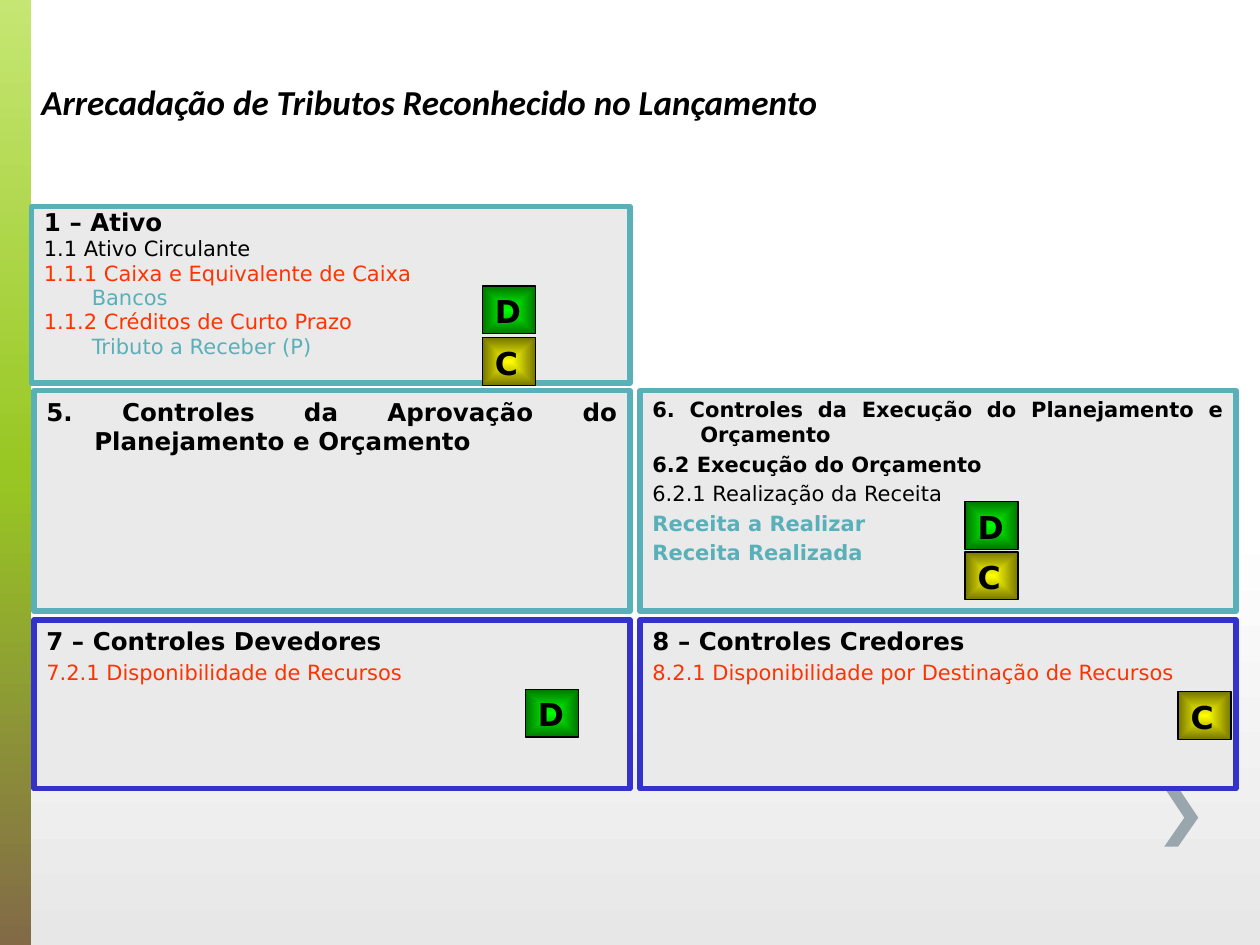
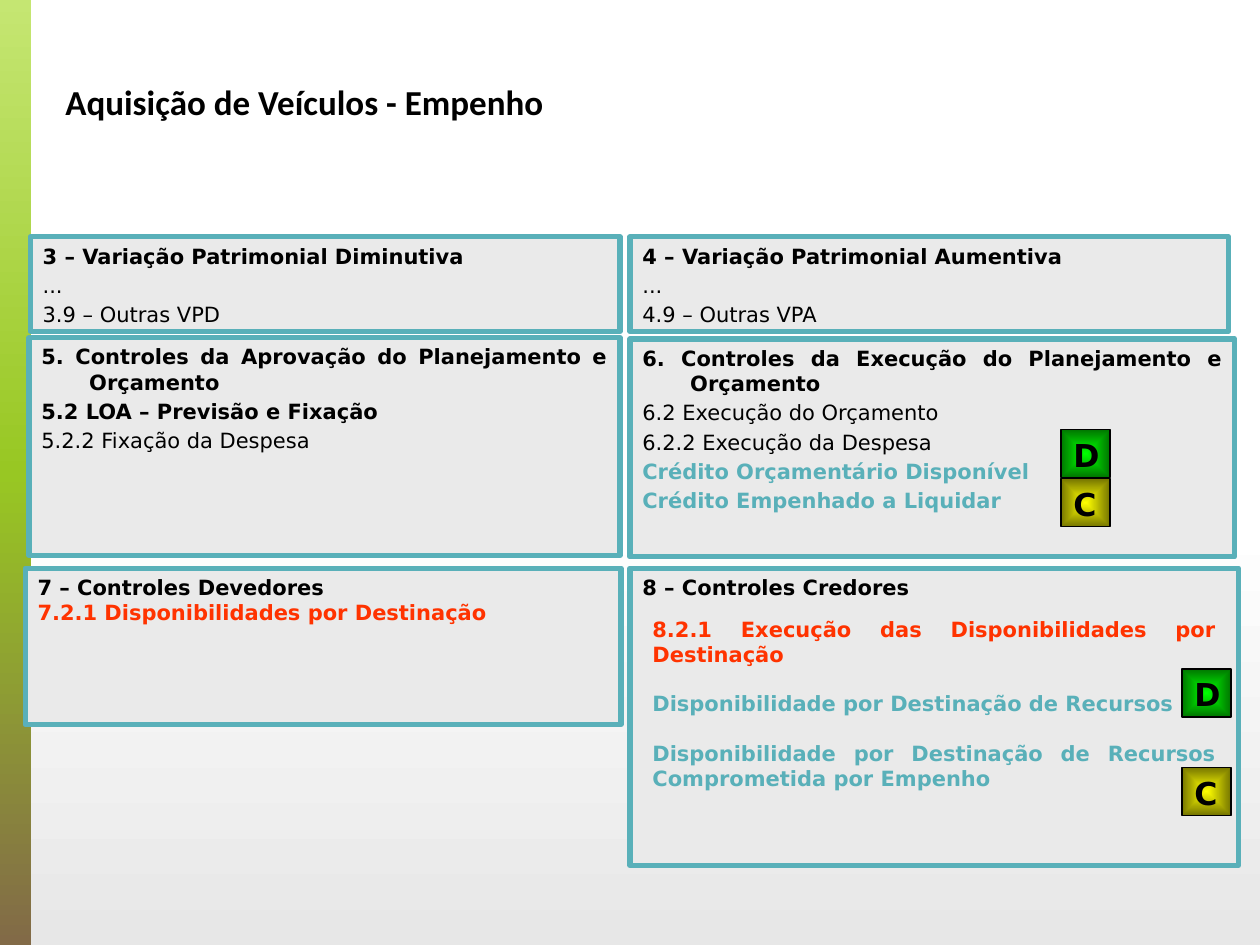
from dataclasses import dataclass

from lxml.etree import SubElement
from pptx import Presentation
from pptx.dml.color import RGBColor
from pptx.enum.shapes import MSO_SHAPE as Shape
from pptx.enum.text import MSO_ANCHOR as Anchor, PP_ALIGN as Align
from pptx.oxml.ns import qn
from pptx.util import Inches, Pt


@dataclass(frozen=True)
class Theme:
    black: str = "000000"
    red: str = "FF3300"
    teal: str = "59B0B9"
    blue: str = "3333CC"
    panel: str = "EAEAEA"
    chevron: str = "99A6AE"
    backdrop: tuple = ((0, "FFFFFF"), (55, "FFFFFF"), (100, "E7E7E7"))
    band: tuple = ((0, "C5E672"), (50, "98C723"), (100, "826A47"))
    debit: tuple = ((0, "00FF00"), (100, "007600"))
    credit: tuple = ((0, "FFFF00"), (100, "767600"))
    title_font: str = "Calibri"
    body_font: str = "DejaVu Sans"
    title_size: int = 20
    badge_size: int = 18
    heading_size: int = 14
    body_size: int = 12
    border: float = 3
    badge_border: float = 0.75
    hang: float = 0.38


THEME = Theme()


@dataclass(frozen=True)
class Entry:
    text: str
    color: str = THEME.black
    bold: bool = False
    size: int = THEME.body_size
    indented: bool = False


def heading(text, size=THEME.body_size):
    return Entry(text, bold=True, size=size)


def large_heading(text):
    return heading(text, THEME.heading_size)


def set_gradient(fill, owner, stops, centered=False):
    fill.gradient()
    gradient = owner.find(".//" + qn("a:gradFill"))
    for child in list(gradient):
        gradient.remove(child)
    stop_list = SubElement(gradient, qn("a:gsLst"))
    for position, color in stops:
        stop = SubElement(stop_list, qn("a:gs"), pos=str(position * 1000))
        SubElement(stop, qn("a:srgbClr"), val=color)
    if centered:
        center = SubElement(gradient, qn("a:path"), path="shape")
        SubElement(center, qn("a:fillToRect"), l="50000", t="50000", r="50000", b="50000")
    else:
        SubElement(gradient, qn("a:lin"), ang="5400000", scaled="0")


def set_line(shape, color, width):
    shape.line.color.rgb = RGBColor.from_string(color)
    shape.line.width = Pt(width)


def add_rectangle(page, box):
    shape = page.shapes.add_shape(Shape.RECTANGLE, *map(Inches, box))
    shape.shadow.inherit = False
    return shape


def write_entries(frame, entries, spacing=0.2, line_spacing=None, hang=0.0):
    frame.word_wrap = True
    frame.vertical_anchor = Anchor.TOP
    for index, entry in enumerate(entries):
        para = frame.paragraphs[0] if index == 0 else frame.add_paragraph()
        para.text = entry.text
        para.alignment = Align.JUSTIFY
        para.space_before = Pt(entry.size * spacing if index else 0)
        if line_spacing:
            para.line_spacing = line_spacing
        properties = para._p.get_or_add_pPr()
        properties.set("marL", str(Inches(hang)))
        properties.set("indent", str(0 if entry.indented else Inches(-hang)))
        font = para.font
        font.name = THEME.body_font
        font.size = Pt(entry.size)
        font.bold = entry.bold
        font.color.rgb = RGBColor.from_string(entry.color)


def add_badge(page, letter, left, top, width):
    badge = add_rectangle(page, (left, top, width, 0.38))
    stops = THEME.debit if letter == "D" else THEME.credit
    set_gradient(badge.fill, badge._element.spPr, stops, centered=True)
    set_line(badge, THEME.black, THEME.badge_border)
    write_entries(badge.text_frame, [heading(letter, THEME.badge_size)])


def add_panel(page, box, entries, badges=(), badge_width=0.42,
              border=THEME.teal, spacing=0.2, line_spacing=None):
    panel = add_rectangle(page, box)
    panel.fill.solid()
    panel.fill.fore_color.rgb = RGBColor.from_string(THEME.panel)
    set_line(panel, border, THEME.border)
    write_entries(panel.text_frame, entries, spacing, line_spacing, THEME.hang)
    for letter, across, down in badges:
        add_badge(page, letter, box[0] + across, box[1] + down, badge_width)


def add_detail(page, box, entries):
    detail = page.shapes.add_textbox(*map(Inches, box))
    write_entries(detail.text_frame, entries, spacing=1.17)


def add_title(page, text, left, italic=False):
    title = page.shapes.add_textbox(*map(Inches, (left, 0.59, 9.5, 0.44)))
    title.text_frame.word_wrap = True
    para = title.text_frame.paragraphs[0]
    para.text = text
    font = para.font
    font.name = THEME.title_font
    font.size = Pt(THEME.title_size)
    font.bold = True
    font.italic = italic
    font.color.rgb = RGBColor.from_string(THEME.black)


def add_page(deck):
    page = deck.slides.add_slide(deck.slide_layouts[6])
    set_gradient(page.background.fill, page.element, THEME.backdrop)
    band = add_rectangle(page, (0, 0, 0.25, 7.5))
    set_gradient(band.fill, band._element.spPr, THEME.band)
    band.line.fill.background()
    return page


def add_chevron(page, left, top):
    outline = [(0.11, 0), (0, 0), (0.16, 0.24), (0, 0.47), (0.11, 0.47), (0.27, 0.24)]
    points = [(Inches(left + x), Inches(top + y)) for x, y in outline]
    builder = page.shapes.build_freeform(*points[0])
    builder.add_line_segments(points[1:], close=True)
    chevron = builder.convert_to_shape()
    chevron.shadow.inherit = False
    chevron.fill.solid()
    chevron.fill.fore_color.rgb = RGBColor.from_string(THEME.chevron)
    chevron.line.fill.background()


def build_tax_collection(deck):
    page = add_page(deck)
    add_chevron(page, 9.24, 6.25)
    left, right, width = 0.27, 5.08, 4.73
    add_panel(page, (left, 4.92, width, 1.34), [
        large_heading("7 – Controles Devedores"),
        Entry("7.2.1 Disponibilidade de Recursos", THEME.red),
    ], [("D", 3.9, 0.55)], border=THEME.blue)
    add_panel(page, (right, 4.92, width, 1.34), [
        large_heading("8 – Controles Credores"),
        Entry("8.2.1 Disponibilidade por Destinação de Recursos", THEME.red),
    ], [("C", 4.27, 0.57)], border=THEME.blue)
    add_panel(page, (0.25, 1.64, 4.75, 1.4), [
        large_heading("1 – Ativo"),
        Entry("1.1 Ativo Circulante"),
        Entry("1.1.1 Caixa e Equivalente de Caixa", THEME.red),
        Entry("Bancos", THEME.teal, indented=True),
        Entry("1.1.2 Créditos de Curto Prazo", THEME.red),
        Entry("Tributo a Receber (P)", THEME.teal, indented=True),
    ], [("D", 3.58, 0.63), ("C", 3.58, 1.04)], line_spacing=0.8)
    add_panel(page, (left, 3.1, width, 1.75), [
        large_heading("5. Controles da Aprovação do Planejamento e Orçamento"),
    ])
    add_panel(page, (right, 3.1, width, 1.75), [
        heading("6. Controles da Execução do Planejamento e Orçamento"),
        heading("6.2 Execução do Orçamento"),
        Entry("6.2.1 Realização da Receita"),
        Entry("Receita a Realizar", THEME.teal, bold=True),
        Entry("Receita Realizada", THEME.teal, bold=True),
    ], [("D", 2.58, 0.88), ("C", 2.58, 1.28)])
    add_title(page, "Arrecadação de Tributos Reconhecido no Lançamento", 0.23, italic=True)


def build_vehicle_purchase(deck):
    page = add_page(deck)
    add_title(page, "Aquisição de Veículos - Empenho", 0.42)
    right, badge_width = 5, 0.39
    add_panel(page, (0.24, 1.88, 4.68, 0.75), [
        heading("3 – Variação Patrimonial Diminutiva"),
        Entry("..."),
        Entry("3.9 – Outras VPD"),
    ])
    add_panel(page, (right, 1.88, 4.75, 0.75), [
        heading("4 – Variação Patrimonial Aumentiva"),
        Entry("..."),
        Entry("4.9 – Outras VPA"),
    ])
    add_panel(page, (right, 2.69, 4.8, 1.73), [
        heading("6. Controles da Execução do Planejamento e Orçamento"),
        Entry("6.2 Execução do Orçamento"),
        Entry("6.2.2 Execução da Despesa"),
        Entry("Crédito Orçamentário Disponível", THEME.teal, bold=True),
        Entry("Crédito Empenhado a Liquidar", THEME.teal, bold=True),
    ], [("D", 3.42, 0.72), ("C", 3.42, 1.11)], badge_width)
    add_panel(page, (0.23, 2.68, 4.69, 1.73), [
        heading("5. Controles da Aprovação do Planejamento e Orçamento"),
        heading("5.2 LOA – Previsão e Fixação"),
        Entry("5.2.2 Fixação da Despesa"),
    ])
    add_panel(page, (0.2, 4.51, 4.73, 1.24), [
        heading("7 – Controles Devedores"),
        Entry("7.2.1 Disponibilidades por Destinação", THEME.red, bold=True),
    ], spacing=0)
    add_panel(page, (right, 4.51, 4.83, 2.36), [
        heading("8 – Controles Credores"),
    ], [("D", 4.38, 0.8), ("C", 4.38, 1.58)], badge_width)
    add_detail(page, (5.08, 4.84, 4.67, 1.72), [
        Entry("8.2.1 Execução das Disponibilidades por Destinação", THEME.red, bold=True),
        Entry("Disponibilidade por Destinação de Recursos", THEME.teal, bold=True),
        Entry("Disponibilidade por Destinação de Recursos Comprometida por Empenho",
              THEME.teal, bold=True),
    ])


def main():
    deck = Presentation()
    deck.slide_width = Inches(10)
    deck.slide_height = Inches(7.5)
    build_tax_collection(deck)
    build_vehicle_purchase(deck)
    deck.save("out.pptx")


if __name__ == "__main__":
    main()
